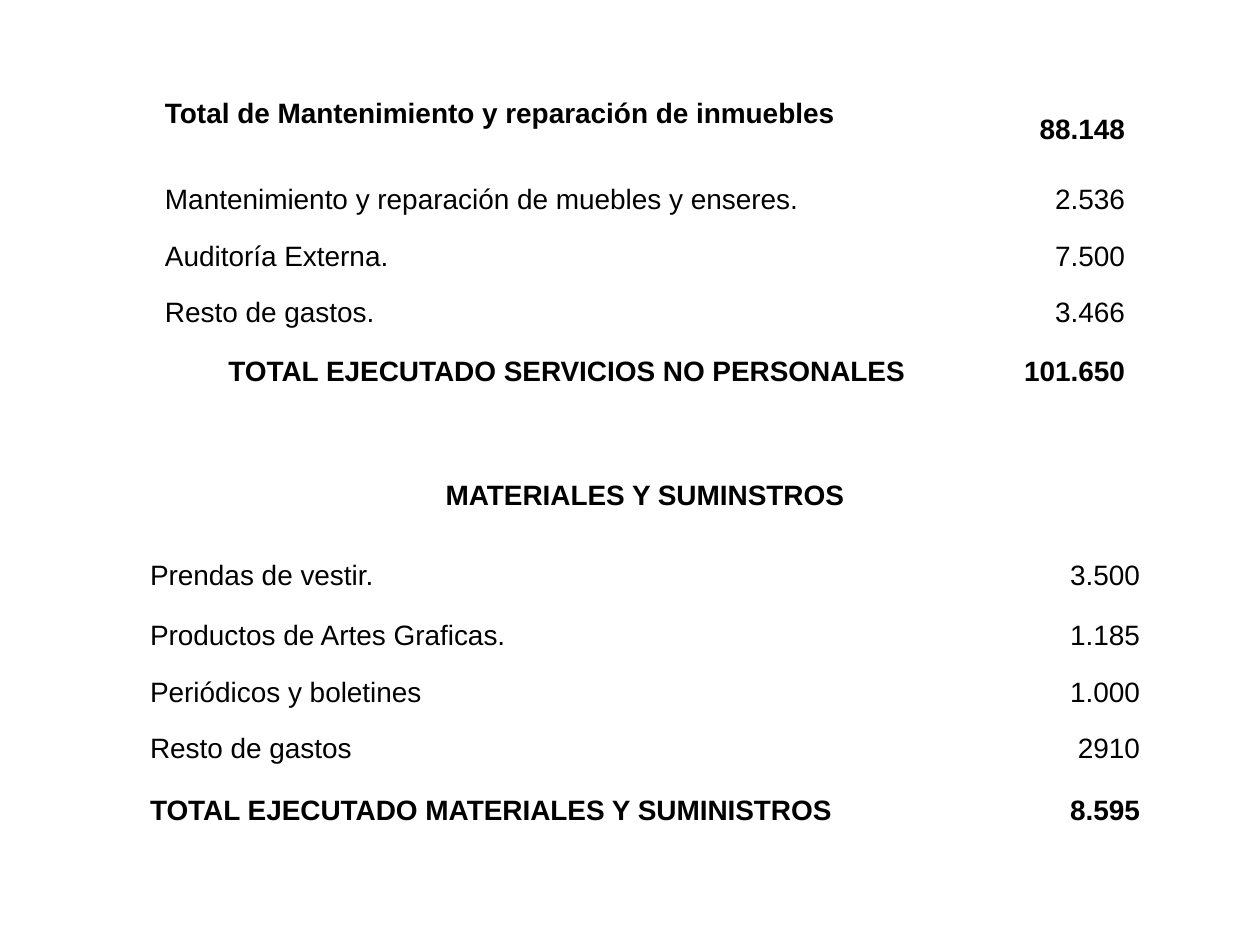
from pptx import Presentation
from pptx.dml.color import RGBColor
from pptx.enum.text import MSO_ANCHOR, PP_ALIGN
from pptx.util import Pt

EMU_PER_PX = 914400 / 126
LEFT, CENTER = PP_ALIGN.LEFT, PP_ALIGN.CENTER
RIGHT, JUSTIFY = PP_ALIGN.RIGHT, PP_ALIGN.JUSTIFY
MIDDLE = MSO_ANCHOR.MIDDLE
FONT, FONT_SIZE, TEXT_COLOUR = "Arial", 16, "000000"
BLANK_LAYOUT = 6

# Each row: height, label, amount, label alignment, bold
SERVICES = [
    (87, "Total de Mantenimiento y reparación de inmuebles", "88.148", LEFT, True),
    (53, "Mantenimiento y reparación de muebles y enseres.", "2.536", LEFT, False),
    (60, "Auditoría Externa.", "7.500", LEFT, False),
    (53, "Resto de gastos.", "3.466", LEFT, False),
    (64, "TOTAL EJECUTADO SERVICIOS NO PERSONALES", "101.650", CENTER, True),
]
MATERIALS = [
    (87, "MATERIALES Y SUMINSTROS", None, CENTER, True),
    (72, "Prendas de vestir.", "3.500", JUSTIFY, False),
    (48, "Productos de Artes Graficas.", "1.185", JUSTIFY, False),
    (67, "Periódicos y boletines", "1.000", JUSTIFY, False),
    (45, "Resto de gastos", "2910", JUSTIFY, False),
    (78, "TOTAL EJECUTADO MATERIALES Y SUMINISTROS", "8.595", JUSTIFY, True),
]


def px(length):
    return round(length * EMU_PER_PX)


def colour(hex_code):
    return RGBColor.from_string(hex_code)


def format_cell(cell):
    cell.fill.background()
    cell.vertical_anchor = MIDDLE
    cell.margin_left = cell.margin_right = cell.margin_top = px(1)
    cell.margin_bottom = 0


def write_cell(cell, text, alignment, bold):
    paragraph = cell.text_frame.paragraphs[0]
    paragraph.alignment = alignment
    run = paragraph.add_run()
    run.text = text
    run.font.name = FONT
    run.font.size = Pt(FONT_SIZE)
    run.font.bold = bold
    run.font.color.rgb = colour(TEXT_COLOUR)


def add_expense_table(slide, left, top, widths, rows):
    height = sum(row[0] for row in rows)
    table = slide.shapes.add_table(
        len(rows), len(widths), px(left), px(top), px(sum(widths)), px(height)
    ).table
    table.first_row = table.horz_banding = False
    for column, width in zip(table.columns, widths):
        column.width = px(width)

    for index, (row_height, label, amount, alignment, bold) in enumerate(rows):
        table.rows[index].height = px(row_height)
        label_cell, amount_cell = table.cell(index, 0), table.cell(index, 1)
        format_cell(label_cell)
        format_cell(amount_cell)
        write_cell(label_cell, label, alignment, bold)
        # A row without an amount is a heading across both columns
        if amount is None:
            label_cell.merge(amount_cell)
        else:
            write_cell(amount_cell, amount, RIGHT, bold)
    return table


def main():
    presentation = Presentation()
    presentation.slide_width, presentation.slide_height = px(1260), px(945)
    slide = presentation.slides.add_slide(presentation.slide_layouts[BLANK_LAYOUT])

    # Services; the first label sits one text line above its amount's baseline
    services = add_expense_table(slide, 164, 86, (806, 156), SERVICES)
    services.cell(0, 0).margin_bottom = px(32)

    # Materials and supplies
    add_expense_table(slide, 149, 452, (874, 118), MATERIALS)

    presentation.save("out.pptx")


if __name__ == "__main__":
    main()
